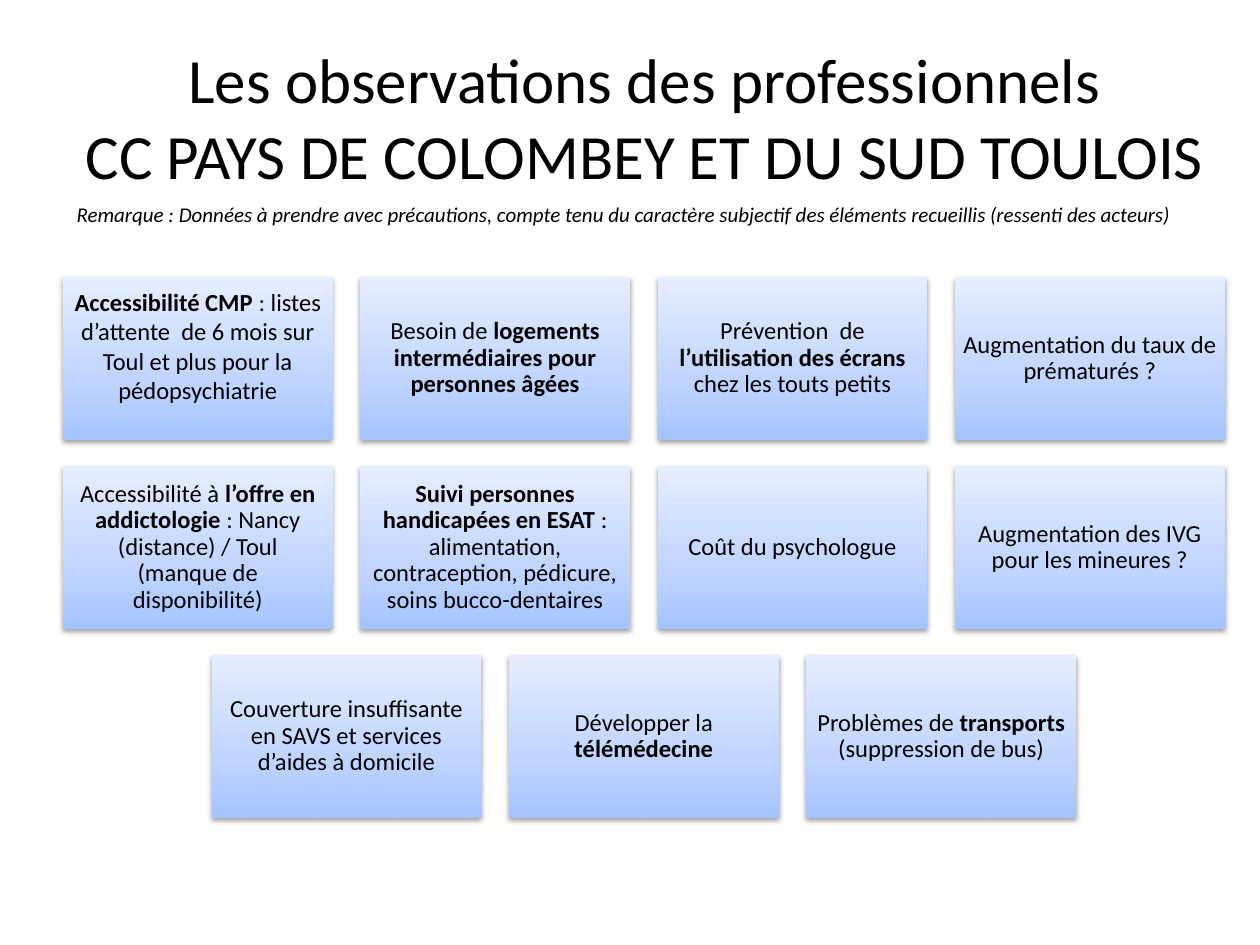
from copy import deepcopy
from dataclasses import dataclass

from lxml.etree import SubElement
from pptx import Presentation
from pptx.dml.color import RGBColor
from pptx.enum.shapes import MSO_SHAPE
from pptx.enum.text import MSO_ANCHOR, MSO_AUTO_SIZE, PP_ALIGN
from pptx.oxml.ns import qn
from pptx.util import Inches, Pt

HUES = {"ink": "000000", "low": "A4C4FF", "mid": "BFD4FF", "high": "E6EEFF"}
STOPS = [(0, "low"), (0.35, "mid"), (1, "high")]

# Card grid in inches: origin, card size, and step from card to card
LEFT, TOP = 0.5, 2.2
WIDE, HIGH = 2.14, 1.29
STEP_X, STEP_Y = 2.36, 1.5
COLS = 4
PAD = 0.06


@dataclass
class Card:
    text: str  # bold parts stand between asterisks
    lead: float = 0.9
    foot: float = PAD


ROWS = [
    [
        Card("*Accessibilité CMP *: listes d’attente  de 6 mois sur Toul "
             "et plus pour la pédopsychiatrie", lead=1.0, foot=0.26),
        Card("Besoin de *logements intermédiaires pour personnes âgées*"),
        Card("Prévention  de *l’utilisation des écrans *chez les touts petits"),
        Card("Augmentation du taux de prématurés ?"),
    ],
    [
        Card("Accessibilité à *l’offre en addictologie *: Nancy (distance) / "
             "Toul (manque de disponibilité)"),
        Card("*Suivi personnes handicapées en ESAT *: alimentation, "
             "contraception, pédicure, soins bucco-dentaires"),
        Card("Coût du psychologue"),
        Card("Augmentation des IVG pour les mineures ?"),
    ],
    [
        Card("Couverture insuffisante en SAVS et services d’aides à domicile"),
        Card("Développer la *télémédecine*"),
        Card("Problèmes de *transports* (suppression de bus)"),
    ],
]


def apply(item, **vals) -> None:
    for key, val in vals.items():
        setattr(item, key, val)


def style(font, size: float, **vals) -> None:
    apply(font, name="Calibri", size=Pt(size), **vals)
    font.color.rgb = RGBColor.from_string(HUES["ink"])


def shade(shape) -> None:
    """Fill with the three-stop gradient, pale at the top."""
    shape.fill.gradient()
    shape.fill.gradient_angle = 90
    stops = shape._element.spPr.find(qn("a:gradFill")).find(qn("a:gsLst"))
    stops.append(deepcopy(stops[-1]))
    for stop, (place, hue) in zip(shape.fill.gradient_stops, STOPS):
        stop.position = place
        stop.color.rgb = RGBColor.from_string(HUES[hue])


def drop(shape) -> None:
    """Cast a soft shadow straight down."""
    shape.shadow.inherit = False
    glow = shape._element.spPr.find(qn("a:effectLst"))
    cast = SubElement(glow, qn("a:outerShdw"), blurRad=str(Pt(3.1)),
                      dist=str(Pt(1.6)), dir="5400000", rotWithShape="0")
    tint = SubElement(cast, qn("a:srgbClr"), val=HUES["ink"])
    SubElement(tint, qn("a:alpha"), val="38000")


def draw(slide, card: Card, col: float, row: int) -> None:
    box = slide.shapes.add_shape(
        MSO_SHAPE.RECTANGLE, Inches(LEFT + col * STEP_X),
        Inches(TOP + row * STEP_Y), Inches(WIDE), Inches(HIGH))
    shade(box)
    box.line.fill.background()
    drop(box)
    frame = box.text_frame
    apply(frame, word_wrap=True, vertical_anchor=MSO_ANCHOR.MIDDLE,
          margin_left=Inches(PAD), margin_right=Inches(PAD),
          margin_top=Inches(PAD), margin_bottom=Inches(card.foot))
    para = frame.paragraphs[0]
    apply(para, alignment=PP_ALIGN.CENTER, line_spacing=card.lead)
    for i, part in enumerate(card.text.split("*")):
        if part:
            run = para.add_run()
            run.text = part
            style(run.font, 14, bold=i % 2 == 1)


def main() -> None:
    deck = Presentation()
    apply(deck, slide_width=Inches(10), slide_height=Inches(7.5))
    slide = deck.slides.add_slide(deck.slide_layouts[5])

    # Title
    title = slide.shapes.title
    apply(title, left=Inches(0.35), top=Inches(0.3),
          width=Inches(9.53), height=Inches(1.25))
    frame = title.text_frame
    frame.text = ("Les observations des professionnels\v"
                  "CC PAYS DE COLOMBEY ET DU SUD TOULOIS")
    apply(frame, word_wrap=True, auto_size=MSO_AUTO_SIZE.NONE,
          vertical_anchor=MSO_ANCHOR.MIDDLE)
    frame.paragraphs[0].alignment = PP_ALIGN.CENTER
    for run in frame.paragraphs[0].runs:
        style(run.font, 36)

    # Cards, each row centred on the grid
    for row, cards in enumerate(ROWS):
        shift = (COLS - len(cards)) / 2
        for col, card in enumerate(cards):
            draw(slide, card, col + shift, row)

    # Remark
    note = slide.shapes.add_textbox(Inches(0.51), Inches(1.55),
                                    Inches(9.06), Inches(0.3))
    apply(note.text_frame, word_wrap=True,
          auto_size=MSO_AUTO_SIZE.SHAPE_TO_FIT_TEXT)
    run = note.text_frame.paragraphs[0].add_run()
    run.text = ("Remarque : Données à prendre avec précautions, compte tenu du "
                "caractère subjectif des éléments recueillis "
                "(ressenti des acteurs)")
    style(run.font, 12, italic=True)

    deck.save("out.pptx")


if __name__ == "__main__":
    main()
